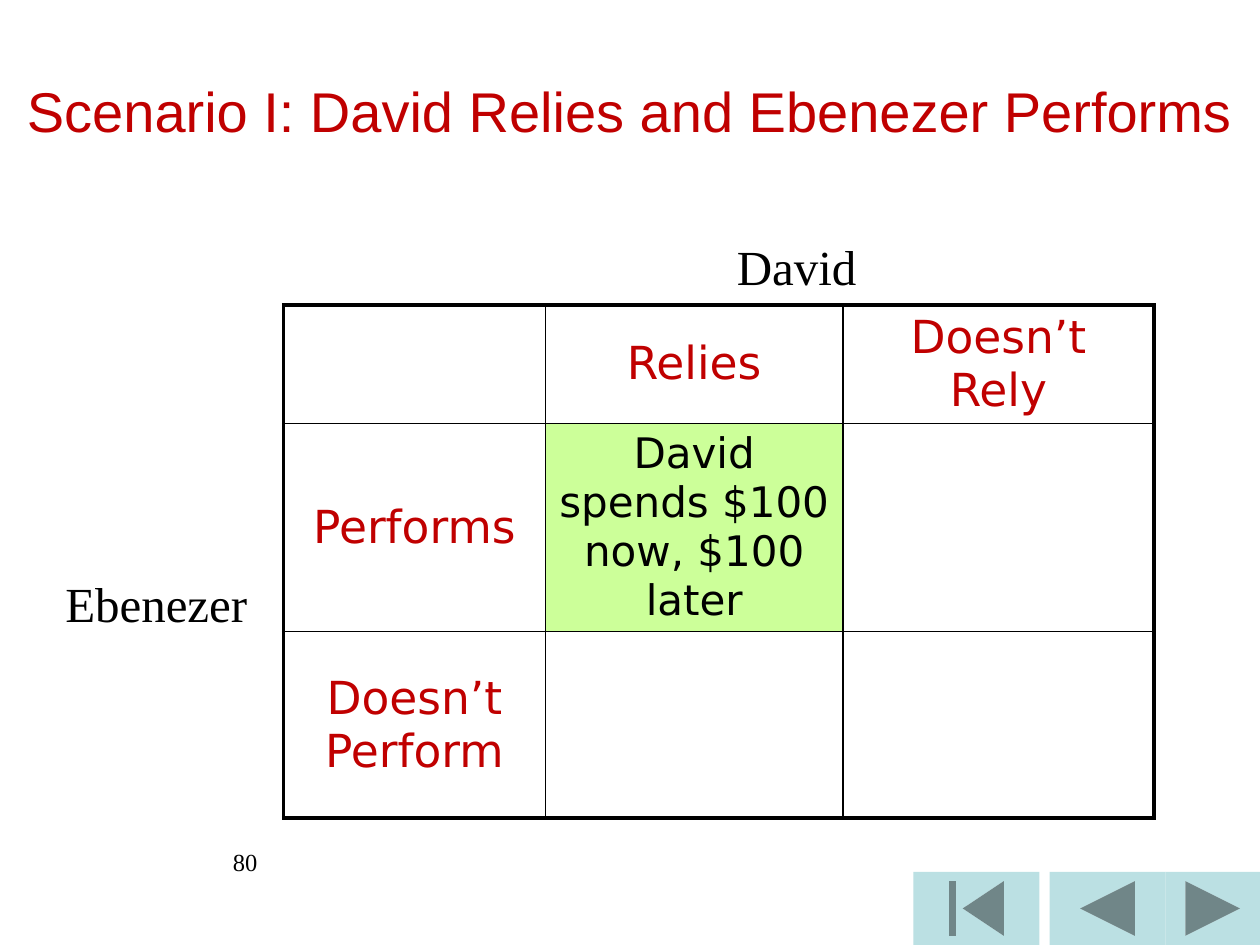
"""Build the reliance game slide: David's and Ebenezer's choices in a payoff table."""
from lxml import etree
from pptx import Presentation
from pptx.dml.color import RGBColor
from pptx.enum.shapes import MSO_SHAPE
from pptx.enum.text import MSO_ANCHOR, PP_ALIGN
from pptx.oxml.ns import qn
from pptx.util import Inches, Pt

BACK = MSO_SHAPE.ACTION_BUTTON_BACK_OR_PREVIOUS
BEGINNING = MSO_SHAPE.ACTION_BUTTON_BEGINNING
FORWARD = MSO_SHAPE.ACTION_BUTTON_FORWARD_OR_NEXT
CENTER, LEFT = PP_ALIGN.CENTER, PP_ALIGN.LEFT
MIDDLE, TOP = MSO_ANCHOR.MIDDLE, MSO_ANCHOR.TOP
RED = RGBColor(0xC0, 0x00, 0x00)
BLACK = RGBColor(0x00, 0x00, 0x00)
GREEN = RGBColor(0xCC, 0xFF, 0x99)
PALE_TEAL = RGBColor(0xBB, 0xE0, 0xE3)
SERIF, SANS, HEADING = "Times New Roman", "DejaVu Sans", "Arial"
OUTER, INNER = Pt(2.25), Pt(1)


def write(frame, wording, size, font, color, align, anchor):
    frame.word_wrap = True
    frame.vertical_anchor = anchor
    paragraph = frame.paragraphs[0]
    paragraph.alignment = align
    run = paragraph.add_run()
    run.text = wording
    run.font.size = Pt(size)
    run.font.name = font
    run.font.color.rgb = color


def add_border(cell, side, width):
    line = etree.SubElement(cell._tc.get_or_add_tcPr(), qn(f"a:{side}"), w=str(width))
    fill = etree.SubElement(line, qn("a:solidFill"))
    etree.SubElement(fill, qn("a:srgbClr"), val=str(BLACK))


prs = Presentation()
prs.slide_width, prs.slide_height = Inches(10), Inches(7.5)
slide = prs.slides.add_slide(prs.slide_layouts[5])
shapes = slide.shapes

title = shapes.title
title.left, title.top = 0, Inches(0.25)
title.width, title.height = prs.slide_width, Inches(1.25)
write(title.text_frame, "Scenario I: David Relies and Ebenezer Performs",
      32, HEADING, RED, CENTER, MIDDLE)

for kind, left, width in [(BACK, 8.33, 0.92), (BEGINNING, 7.25, 1), (FORWARD, 9.25, 0.75)]:
    button = shapes.add_shape(kind, Inches(left), Inches(6.92), Inches(width), Inches(0.58))
    button.shadow.inherit = False
    button.fill.solid()
    button.fill.fore_color.rgb = PALE_TEAL
    button.line.fill.background()

page_number = shapes.add_shape(BACK, Inches(1.75), Inches(6.67), Inches(6.08), Inches(0.52))
page_number.shadow.inherit = False
page_number.fill.background()
page_number.line.fill.background()
write(page_number.text_frame, "80", 14, SERIF, BLACK, LEFT, TOP)

choices = [
    ["", "Relies", "Doesn’t Rely"],
    ["Performs", "David spends $100 now, $100 later", ""],
    ["Doesn’t Perform", "", ""],
]
payoffs = shapes.add_table(3, 3, Inches(2.25), Inches(2.42), Inches(6.92), Inches(4.15)).table
payoffs.first_row = payoffs.horz_banding = False
for column, width in zip(payoffs.columns, [2.08, 2.36, 2.47]):
    column.width = Inches(width)
for row, height in zip(payoffs.rows, [0.83, 1.48, 1.48]):
    row.height = Inches(height)

for r, row_choices in enumerate(choices):
    for c, wording in enumerate(row_choices):
        cell = payoffs.cell(r, c)
        outcome = r == c == 1
        cell.vertical_anchor = MIDDLE
        edges = {"lnL": c == 0, "lnR": c == 2, "lnT": r == 0, "lnB": r == 2}
        for side, on_rim in edges.items():
            add_border(cell, side, OUTER if on_rim else INNER)
        if outcome:
            cell.fill.solid()
            cell.fill.fore_color.rgb = GREEN
        else:
            cell.fill.background()
        if wording:
            write(cell.text_frame, wording, 24 if outcome else 26, SANS,
                  BLACK if outcome else RED, CENTER, MIDDLE)

for player, left, top, width in [("David", 5.75, 1.83, 1.72), ("Ebenezer", 0.42, 4.5, 1.83)]:
    label = shapes.add_textbox(Inches(left), Inches(top), Inches(width), Inches(0.58))
    write(label.text_frame, player, 28, SERIF, BLACK, LEFT, TOP)

prs.save("out.pptx")
